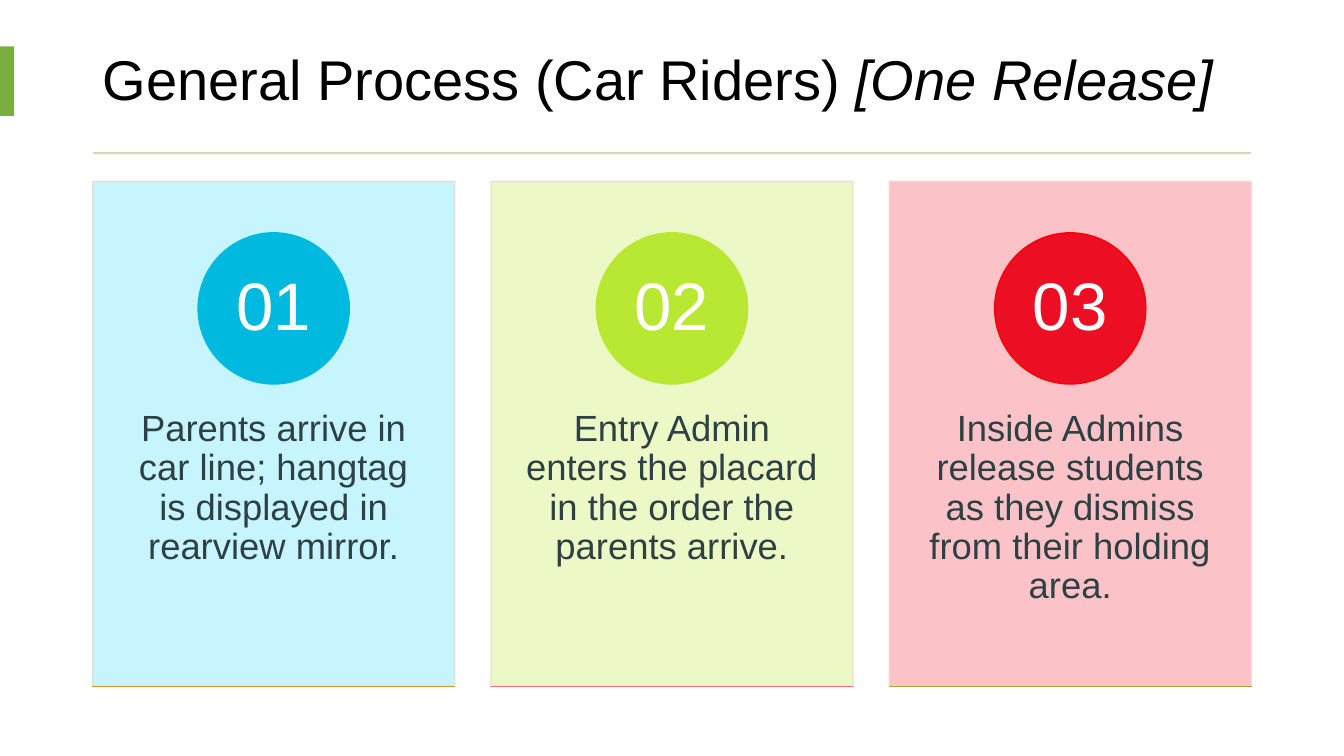
from dataclasses import dataclass

from lxml import etree
from pptx import Presentation
from pptx import util as u
from pptx.dml.color import RGBColor
from pptx.enum import shapes, text
from pptx.oxml.ns import qn

Inches = u.Inches


@dataclass(frozen=True)
class Theme:
    font: str = "Arial"
    title_size: int = 40
    number_size: int = 48
    body_size: int = 26
    title: str = "000000"
    body: str = "2D4044"
    number: str = "FFFFFF"
    accent: str = "7BAE41"
    rule: str = "D7D8BA"


@dataclass(frozen=True)
class Step:
    words: str
    panel: str
    border: str
    circle: str
    circle_line: str
    base: str
    panel_alpha: int = 90


THEME = Theme()
MARGIN, CONTENT_W = 0.92, 11.49
CARD_TOP, CARD_W, CARD_H, CARD_PITCH = 1.8, 3.59, 5.01, 3.95
CIRCLE, NUMBER_BOX = 1.5, 1.06

STEPS = [
    Step("Parents arrive in car line; hangtag is displayed in rearview mirror.",
         "C1F5FF", "E0E1CE", "00B9DE", "00B9DE", "D4952A"),
    Step("Entry Admin enters the placard in the order the parents arrive.",
         "ECF9C7", "EFDDCD", "B9E832", "B9E832", "EE6E88", 100),
    Step("Inside Admins release students as they dismiss from their holding area.",
         "FBBDC3", "F7D5D0", "EC0F24", "FF0000", "A1A737"),
]


def set_alpha(color_format_fill, percent):
    """Make a solid fill partly transparent."""
    color = color_format_fill.find(".//" + qn("a:srgbClr"))
    etree.SubElement(color, qn("a:alpha"), val=str(percent * 1000))


def add_block(slide, kind, box, fill, line=None, fill_alpha=100, line_alpha=100):
    sp = slide.shapes.add_shape(kind, *map(Inches, box))
    sp.shadow.inherit = False
    sp.fill.solid()
    sp.fill.fore_color.rgb = RGBColor.from_string(fill)
    if fill_alpha < 100:
        set_alpha(sp._element.spPr.find(qn("a:solidFill")), fill_alpha)
    if line is None:
        sp.line.fill.background()
        return
    sp.line.color.rgb = RGBColor.from_string(line)
    sp.line.width = u.Pt(1)
    if line_alpha < 100:
        set_alpha(sp._element.spPr.find(qn("a:ln")), line_alpha)


def style_paragraph(p, size, color, align):
    p.alignment = align
    p.line_spacing = 0.9
    p.font.name = THEME.font
    p.font.size = u.Pt(size)
    p.font.color.rgb = RGBColor.from_string(color)


def add_text(slide, box, words, size, color, inset_x, inset_y, anchor):
    tf = slide.shapes.add_textbox(*map(Inches, box)).text_frame
    tf.word_wrap = True
    tf.vertical_anchor = anchor
    tf.margin_left = tf.margin_right = Inches(inset_x)
    tf.margin_top = tf.margin_bottom = Inches(inset_y)
    p = tf.paragraphs[0]
    p.text = words
    style_paragraph(p, size, color, text.PP_ALIGN.CENTER)


def add_title(slide):
    sp = slide.shapes.title
    sp.left, sp.top, sp.width, sp.height = map(Inches, (MARGIN, 0.27, CONTENT_W, 1.1))
    tf = sp.text_frame
    tf.word_wrap = True
    tf.vertical_anchor = text.MSO_ANCHOR.MIDDLE
    p = tf.paragraphs[0]
    p.add_run().text = "General Process (Car Riders) "
    r = p.add_run()
    r.text = "[One Release]"
    r.font.italic = True
    style_paragraph(p, THEME.title_size, THEME.title, text.PP_ALIGN.LEFT)


def add_card(slide, index, step):
    rect, oval = shapes.MSO_SHAPE.RECTANGLE, shapes.MSO_SHAPE.OVAL
    left = MARGIN + index * CARD_PITCH
    center = left + CARD_W / 2

    # Panel and its wording
    add_block(slide, rect, (left, CARD_TOP, CARD_W, CARD_H),
              step.panel, step.border, step.panel_alpha, 90)
    add_text(slide, (left, 3.71, CARD_W, 3.01), step.words, THEME.body_size,
             THEME.body, 0.28, 0.36, text.MSO_ANCHOR.TOP)

    # Numbered circle
    add_block(slide, oval, (center - CIRCLE / 2, 2.31, CIRCLE, CIRCLE),
              step.circle, step.circle_line)
    add_text(slide, (center - NUMBER_BOX / 2, 2.53, NUMBER_BOX, NUMBER_BOX),
             f"{index + 1:02}", THEME.number_size, THEME.number,
             0.12, 0.01, text.MSO_ANCHOR.MIDDLE)

    # Base edge
    add_block(slide, rect, (left, CARD_TOP + CARD_H, CARD_W, 0), step.base, step.base)


def main():
    prs = Presentation()
    prs.slide_width, prs.slide_height = Inches(13.33), Inches(7.5)
    slide = prs.slides.add_slide(prs.slide_layouts[5])

    # Heading with accent tab and rule
    add_title(slide)
    rect = shapes.MSO_SHAPE.RECTANGLE
    add_block(slide, rect, (0, 0.46, 0.14, 0.69), THEME.accent)
    add_block(slide, rect, (MARGIN, 1.51, CONTENT_W, 0.02), THEME.rule)

    # Step cards
    for index, step in enumerate(STEPS):
        add_card(slide, index, step)

    prs.save("out.pptx")


if __name__ == "__main__":
    main()
